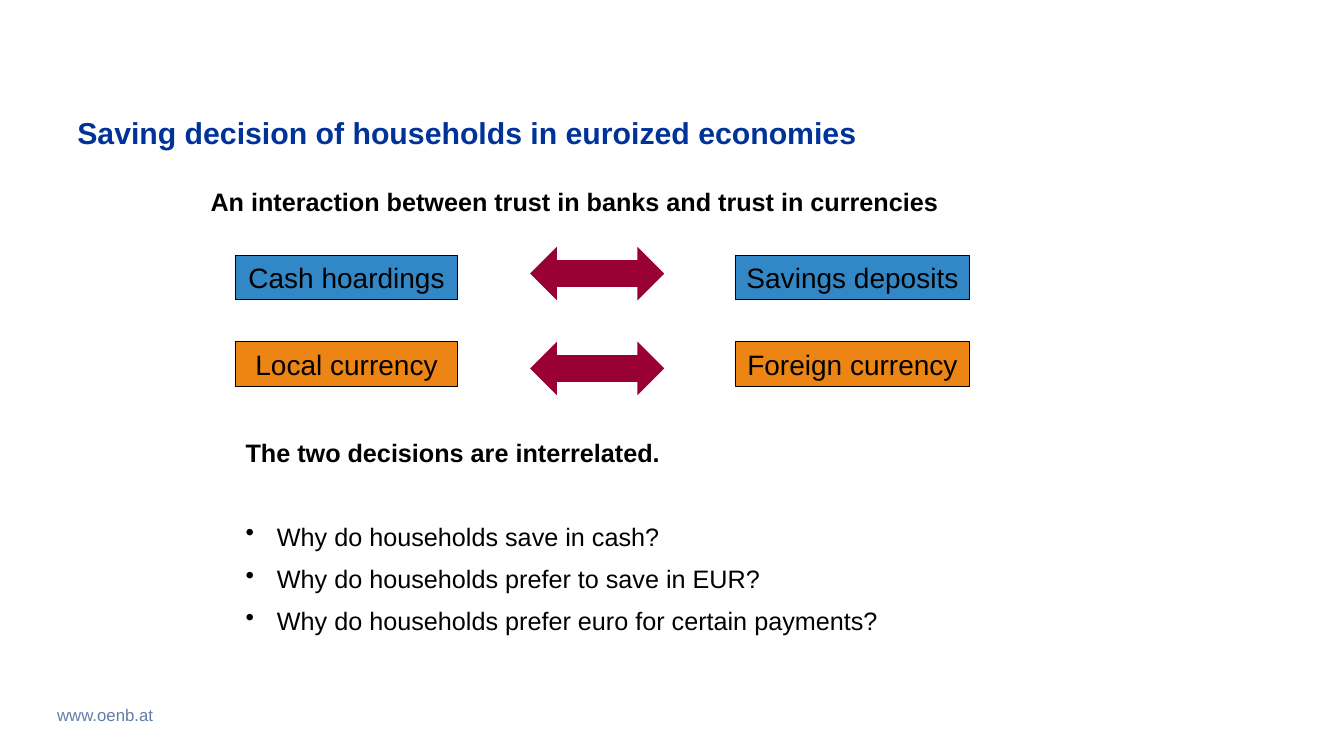
import pptx
import pptx.dml.color
import pptx.enum.shapes
import pptx.enum.text
import pptx.oxml.ns
import pptx.util
from lxml import etree

Cm, Pt = pptx.util.Cm, pptx.util.Pt
RGB = pptx.dml.color.RGBColor
ALIGN = pptx.enum.text.PP_ALIGN
ANCHOR = pptx.enum.text.MSO_ANCHOR
SHAPE = pptx.enum.shapes.MSO_SHAPE
BLACK = RGB(0x00, 0x00, 0x00)
NAVY = RGB(0x00, 0x33, 0x99)
SLATE = RGB(0x60, 0x7E, 0xA9)
BLUE = RGB(0x32, 0x87, 0xC6)
ORANGE = RGB(0xEC, 0x85, 0x14)
WINE = RGB(0x99, 0x00, 0x33)


def write(para, text, size=18, color=BLACK, bold=False, align=ALIGN.LEFT,
          line=None, before=0, bullet=False):
    """Fill a paragraph with formatted text."""
    if bullet:
        props = para._p.get_or_add_pPr()
        props.set("marL", str(Cm(0.79)))
        props.set("indent", str(-Cm(0.79)))
        mark = etree.SubElement(props, pptx.oxml.ns.qn("a:buChar"))
        mark.set("char", "•")
    para.alignment = align
    para.space_before = Pt(before)
    if line:
        para.line_spacing = Pt(line)
    run = para.add_run()
    run.text = text
    font = run.font
    font.name, font.size, font.bold = "Arial", Pt(size), bold
    font.color.rgb = color


class Deck:
    """Hold the slide and its drawing style."""

    def __init__(self):
        self.file = pptx.Presentation()
        self.file.slide_width = Cm(33.87)
        self.file.slide_height = Cm(19.05)
        self.slide = self.file.slides.add_slide(self.file.slide_layouts[6])

    def text(self, area, text="", anchor=ANCHOR.TOP, **style):
        box = self.slide.shapes.add_textbox(*map(Cm, area))
        frame = box.text_frame
        frame.word_wrap = True
        frame.vertical_anchor = anchor
        if text:
            write(frame.paragraphs[0], text, **style)
        return frame

    def shape(self, kind, area, fill, edge=None):
        item = self.slide.shapes.add_shape(kind, *map(Cm, area))
        item.shadow.inherit = False
        item.fill.solid()
        item.fill.fore_color.rgb = fill
        if edge is None:
            item.line.fill.background()
        else:
            item.line.color.rgb = edge
            item.line.width = Pt(0.75)
        return item

    def label(self, area, text, fill):
        frame = self.shape(SHAPE.RECTANGLE, area, fill, BLACK).text_frame
        frame.word_wrap = False
        frame.vertical_anchor = ANCHOR.MIDDLE
        write(frame.paragraphs[0], text, size=20, align=ALIGN.CENTER)

    def arrow(self, area):
        self.shape(SHAPE.LEFT_RIGHT_ARROW, area, WINE)


def main():
    deck = Deck()
    deck.text((1.19, 17.68, 6, 0.71), "www.oenb.at", size=12, color=SLATE, line=13)
    deck.text((1.7, 2.69, 30.48, 1.22),
              "Saving decision of households in euroized economies",
              anchor=ANCHOR.MIDDLE, size=21.6, color=NAVY, bold=True, line=28)
    deck.text((4.88, 4.57, 19.2, 1.02),
              "An interaction between trust in banks and trust in currencies",
              bold=True, align=ALIGN.CENTER)

    rows = [(6.43, 6.22, BLUE, "Cash hoardings", "Savings deposits"),
            (8.61, 8.61, ORANGE, "Local currency", "Foreign currency")]
    for top, tip, fill, left, right in rows:
        deck.label((5.94, top, 5.59, 1.12), left, fill)
        deck.label((18.54, top, 5.89, 1.12), right, fill)
        deck.arrow((13.36, tip, 3.38, 1.35))

    body = deck.text((5.94, 10.8, 24.41, 7.19),
                     "The two decisions are interrelated.", bold=True, line=24)
    asks = ["Why do households save in cash?",
            "Why do households prefer to save in EUR?",
            "Why do households prefer euro for certain payments?"]
    for num, ask in enumerate(asks):
        write(body.add_paragraph(), ask, line=24, before=6 if num else 36, bullet=True)
    deck.file.save("out.pptx")


if __name__ == "__main__":
    main()
